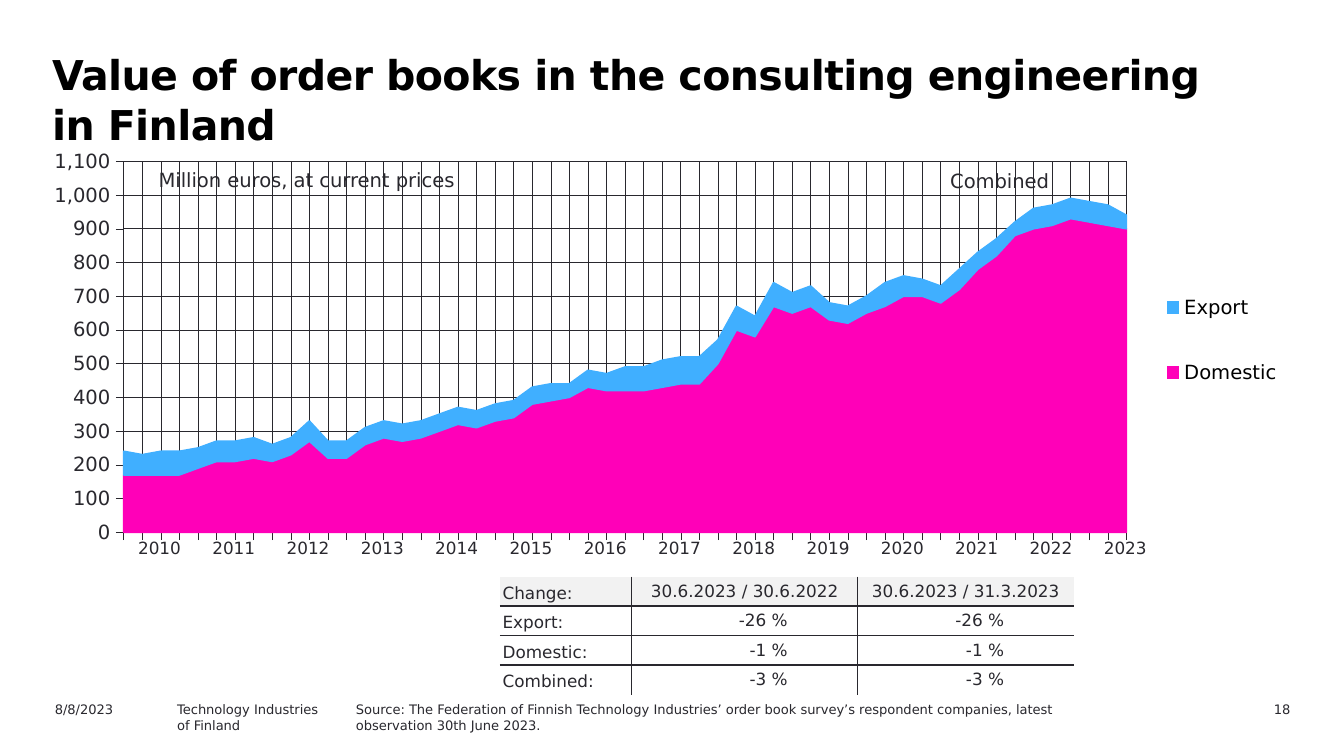
from lxml import etree
from pptx import Presentation
from pptx.chart import data as chart_data
from pptx.dml import color as dml
from pptx.enum import chart as chart_enum, dml as dml_enum, text as text_enum
from pptx.oxml import parse_xml
from pptx.oxml.ns import nsdecls, qn
from pptx.util import Inches, Pt

THEME = {
    "font": "DejaVu Sans",
    "ink": "29282E", "black": "000000", "white": "FFFFFF", "band": "F2F2F2",
    "title": 22, "chart": 10.5, "table": 9, "footer": 7,
}
LEFT, CENTER, RIGHT = (text_enum.PP_ALIGN.LEFT, text_enum.PP_ALIGN.CENTER,
                       text_enum.PP_ALIGN.RIGHT)
MIDDLE, BOTTOM = text_enum.MSO_ANCHOR.MIDDLE, text_enum.MSO_ANCHOR.BOTTOM

TITLE = "Value of order books in the consulting engineering in Finland"
SOURCE = ("Source: The Federation of Finnish Technology Industries’ order book survey’s "
          "respondent companies, latest observation 30th June 2023.")
CHART_LABELS = [
    ("Million euros, at current prices", (1.09, 1.2, 2.44, 0.27), 0.05),
    ("Combined", (6.98, 1.22, 1.06, 0.27), 0.04),
]
FOOTERS = [
    ("8/8/2023", (0.31, 5.17, 1, 0.18), LEFT),
    ("Technology Industries\nof Finland", (1.22, 5.17, 1.8, 0.18), LEFT),
    (SOURCE, (2.55, 5.17, 5.44, 0.4), LEFT),
    ("18", (8.76, 5.17, 0.94, 0.18), RIGHT),
]
QUARTERS = [str(number) for number in range(1, 55)]
SERIES = [
    ("Domestic", "FF00B8", [
        170, 170, 170, 170, 190, 210, 210, 220, 210, 230, 270, 220, 220, 260, 280, 270, 280, 300,
        320, 310, 330, 340, 380, 390, 400, 430, 420, 420, 420, 430, 440, 440, 500, 600, 580, 670,
        650, 670, 630, 620, 650, 670, 700, 700, 680, 720, 780, 820, 880, 900, 910, 930, 920, 910,
        900]),
    ("Export", "40AFFF", [
        70, 60, 70, 70, 60, 60, 60, 60, 50, 50, 60, 50, 50, 50, 50, 50, 50, 50,
        50, 50, 50, 50, 50, 50, 40, 50, 50, 70, 70, 80, 80, 80, 70, 70, 60, 70,
        60, 60, 50, 50, 50, 70, 60, 50, 50, 60, 50, 50, 40, 60, 60, 60, 60, 60,
        40]),
]
CHANGES = [
    ["Change:", "30.6.2023 / 30.6.2022", "30.6.2023 / 31.3.2023"],
    ["Export:", "-26 %", "-26 %"],
    ["Domestic:", "-1 %", "-1 %"],
    ["Combined:", "-3 %", "-3 %"],
]
YEARS = [[str(year) for year in range(2010, 2024)]]
NO_STYLE = "{2D5ABB26-0587-4C30-8999-92F81FD0307C}"


def rgb(value):
    return dml.RGBColor.from_string(value)


def style_font(font, size, color=THEME["ink"], bold=False):
    font.name, font.size, font.bold = THEME["font"], Pt(size), bold
    font.color.rgb = rgb(color)


def write(frame, content, size, color=THEME["ink"], bold=False, align=LEFT,
          line=None, tracking=None):
    frame.word_wrap = True
    for index, words in enumerate(content.split("\n")):
        paragraph = frame.paragraphs[0] if index == 0 else frame.add_paragraph()
        paragraph.alignment = align
        if line:
            paragraph.line_spacing = Pt(line)
        run = paragraph.add_run()
        run.text = words
        style_font(run.font, size, color, bold)
        if tracking:
            run.font._element.set("spc", str(int(tracking * 100)))


def add_text(slide, content, place, side=0.1, top=0.05, **style):
    frame = slide.shapes.add_textbox(*map(Inches, place)).text_frame
    frame.margin_left = frame.margin_right = Inches(side)
    frame.margin_top = frame.margin_bottom = Inches(top)
    write(frame, content, **style)


def style_line(line, width, dash=None):
    line.color.rgb = rgb(THEME["ink"])
    line.width = Pt(width)
    if dash:
        line.dash_style = dash


def set_layout(parent, after, inner=False, **parts):
    for old in parent.findall(qn("c:layout")):
        parent.remove(old)
    target = '<c:layoutTarget val="inner"/>' if inner else ""
    modes = '<c:xMode val="edge"/><c:yMode val="edge"/>'
    sizes = "".join(f'<c:{key} val="{value}"/>' for key, value in parts.items())
    layout = parse_xml(f'<c:layout {nsdecls("c")}><c:manualLayout>{target}{modes}{sizes}'
                       '</c:manualLayout></c:layout>')
    if after is None:
        parent.insert(0, layout)
    else:
        after.addnext(layout)


def add_order_chart(slide):
    orders = chart_data.CategoryChartData(number_format="#,##0")
    orders.categories = QUARTERS
    for name, _, values in SERIES:
        orders.add_series(name, values)
    chart = slide.shapes.add_chart(chart_enum.XL_CHART_TYPE.AREA_STACKED,
                                   *map(Inches, (0.35, 1.11, 9.35, 3.12)), orders).chart
    chart.has_title = False
    style_font(chart.font, THEME["chart"])
    for series, (_, color, _) in zip(chart.plots[0].series, SERIES):
        series.format.fill.solid()
        series.format.fill.fore_color.rgb = rgb(color)
        series.format.line.color.rgb = rgb(color)
        series.format.line.width = Pt(0.88)
    chart.plots[0].vary_by_categories = False

    quarters, euros = chart.category_axis, chart.value_axis
    for axis in (quarters, euros):
        axis.has_major_gridlines = True
        style_line(axis.major_gridlines.format.line, 0.25, dml_enum.MSO_LINE.ROUND_DOT)
        style_line(axis.format.line, 0.22)
        axis.major_tick_mark = chart_enum.XL_TICK_MARK.OUTSIDE
        axis.minor_tick_mark = chart_enum.XL_TICK_MARK.NONE
    quarters.tick_label_position = chart_enum.XL_TICK_LABEL_POSITION.NONE
    euros.minimum_scale, euros.maximum_scale, euros.major_unit = 0, 1100, 100
    euros.tick_labels.number_format = "#,##0"
    euros.tick_labels.number_format_is_linked = False
    style_font(euros.tick_labels.font, THEME["chart"])
    euros._element.find(qn("c:crossBetween")).set("val", "midCat")

    chart.has_legend = True
    legend = chart.legend
    legend.position = chart_enum.XL_LEGEND_POSITION.RIGHT
    legend.include_in_layout = False
    style_font(legend.font, THEME["chart"], THEME["black"])
    set_layout(legend._element, legend._element.find(qn("c:legendPos")),
               x=0.87, y=0.25, w=0.13, h=0.41)
    plot_area = chart._chartSpace.chart.plotArea
    set_layout(plot_area, None, inner=True, x=0.06, y=0.03, w=0.8, h=0.89)
    set_layout(plot_area, None, inner=True, x=0.061, y=0.029, w=0.798, h=0.885)
    plot_area.append(parse_xml(
        f'<c:spPr {nsdecls("c", "a")}><a:noFill/><a:ln w="9525"><a:solidFill>'
        f'<a:srgbClr val="{THEME["ink"]}"/></a:solidFill></a:ln></c:spPr>'))


def rule_cell(cell, edges):
    properties = cell._tc.get_or_add_tcPr()
    for index, edge in enumerate(edges):
        line = etree.Element(qn(f"a:ln{edge}"), w=str(Pt(1)))
        fill = etree.SubElement(line, qn("a:solidFill"))
        etree.SubElement(fill, qn("a:srgbClr"), val=THEME["ink"])
        properties.insert(index, line)


def add_grid(slide, rows, place, widths):
    table = slide.shapes.add_table(len(rows), len(widths), *map(Inches, place)).table
    table.first_row = table.horz_banding = False
    table._tbl.tblPr.find(qn("a:tableStyleId")).text = NO_STYLE
    for column, width in zip(table.columns, widths):
        column.width = Inches(width)
    for row in table.rows:
        row.height = Inches(place[3] / len(rows))
    return table


def add_changes(slide):
    table = add_grid(slide, CHANGES, (3.72, 4.29, 4.27, 0.88), (0.98, 1.68, 1.61))
    last_row, last_column = len(CHANGES) - 1, len(CHANGES[0]) - 1
    for r, row in enumerate(CHANGES):
        for c, words in enumerate(row):
            cell = table.cell(r, c)
            figure = r > 0 and c > 0
            cell.margin_left = cell.margin_top = cell.margin_bottom = Inches(0.02)
            cell.margin_right = Inches(0.52 if figure else 0.02)
            cell.vertical_anchor = MIDDLE if c else BOTTOM
            cell.fill.solid()
            cell.fill.fore_color.rgb = rgb(THEME["white" if r else "band"])
            write(cell.text_frame, words, size=THEME["table"],
                  align=RIGHT if figure else CENTER if c else LEFT)
            inner = (("L", c > 0), ("R", c < last_column), ("T", r > 0), ("B", r < last_row))
            rule_cell(cell, [edge for edge, shown in inner if shown])


def add_years(slide):
    count = len(YEARS[0])
    table = add_grid(slide, YEARS, (0.91, 3.96, 7.74, 0.31), [7.74 / count] * count)
    for cell, year in zip(table.rows[0].cells, YEARS[0]):
        cell.fill.background()
        write(cell.text_frame, year, size=THEME["table"], align=CENTER)


def main():
    deck = Presentation()
    deck.slide_width, deck.slide_height = Inches(10), Inches(10 * 9 / 16)
    slide = deck.slides.add_slide(deck.slide_layouts[6])
    add_text(slide, TITLE, (0.29, 0.31, 8.74, 0.71), size=THEME["title"],
             color=THEME["black"], bold=True, line=27, tracking=-0.3)
    add_order_chart(slide)
    for words, place, top in CHART_LABELS:
        add_text(slide, words, place, side=0.09, top=top, size=THEME["chart"])
    add_changes(slide)
    for words, place, align in FOOTERS:
        add_text(slide, words, place, size=THEME["footer"], align=align)
    add_years(slide)
    deck.save("out.pptx")


if __name__ == "__main__":
    main()
